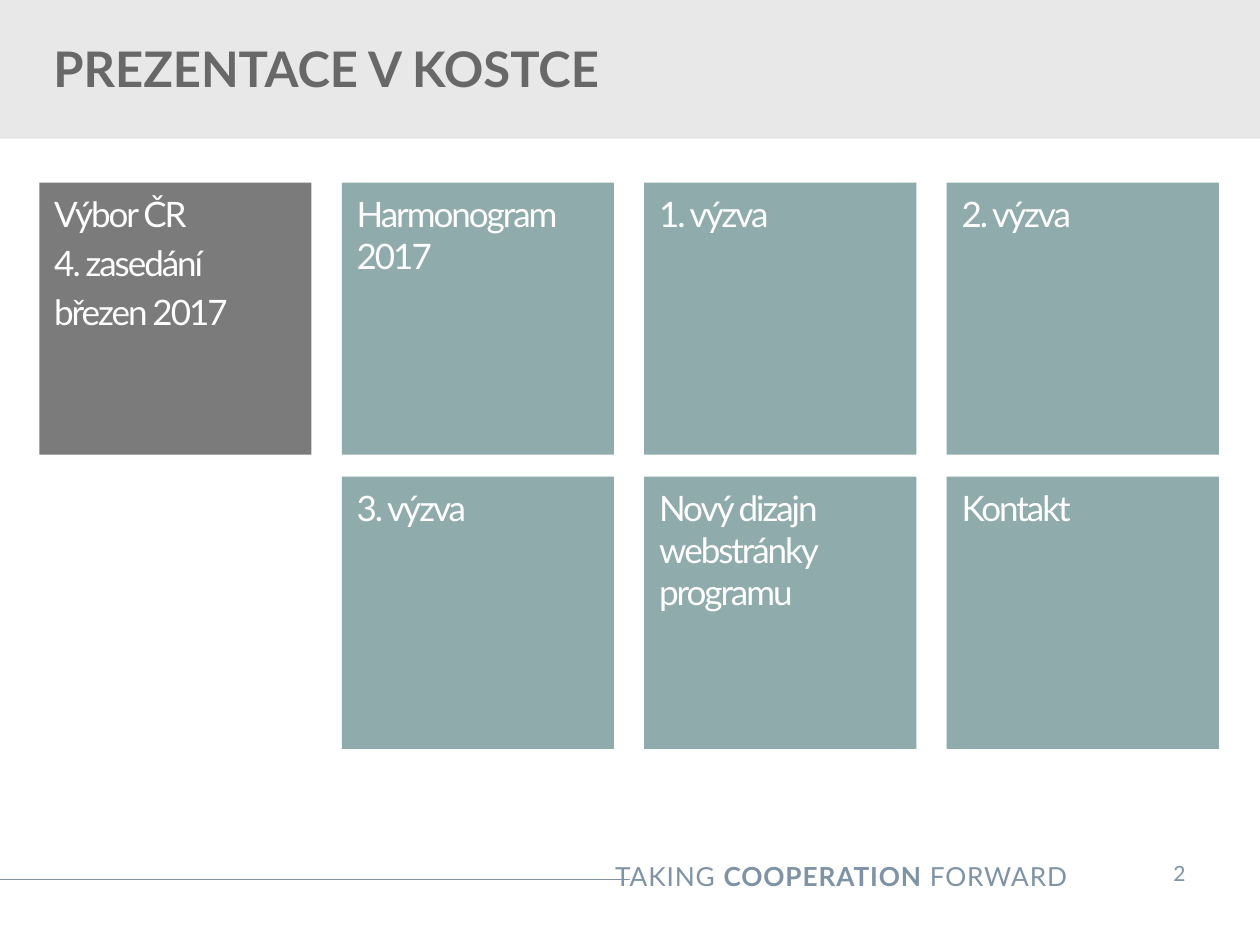
from dataclasses import dataclass

from pptx import Presentation
from pptx.dml.color import RGBColor
from pptx.enum.shapes import MSO_CONNECTOR, MSO_SHAPE
from pptx.enum.text import MSO_ANCHOR, PP_ALIGN
from pptx.oxml.ns import qn
from pptx.util import Pt

RECT = MSO_SHAPE.RECTANGLE
STRAIGHT = MSO_CONNECTOR.STRAIGHT
LEFT, CENTER, RIGHT = PP_ALIGN.LEFT, PP_ALIGN.CENTER, PP_ALIGN.RIGHT
TOP, MIDDLE = MSO_ANCHOR.TOP, MSO_ANCHOR.MIDDLE


@dataclass(frozen=True)
class Theme:
    font: str = "Lato"
    band: RGBColor = RGBColor(0xE8, 0xE8, 0xE8)
    title: RGBColor = RGBColor(0x68, 0x68, 0x68)
    active: RGBColor = RGBColor(0x7B, 0x7B, 0x7B)
    tile: RGBColor = RGBColor(0x90, 0xAB, 0xAB)
    tile_text: RGBColor = RGBColor(0xFF, 0xFF, 0xFF)
    footer: RGBColor = RGBColor(0x7E, 0x93, 0xA5)
    title_size: int = 28
    tile_size: int = 20
    footer_size: int = 15
    number_size: int = 12


THEME = Theme()

TILES = [
    (0, 0, ["Výbor ČR", "4. zasedání", "březen 2017"], THEME.active),
    (0, 1, ["Harmonogram 2017"], THEME.tile),
    (0, 2, ["1. výzva"], THEME.tile),
    (0, 3, ["2. výzva"], THEME.tile),
    (1, 1, ["3. výzva"], THEME.tile),
    (1, 2, ["Nový dizajn webstránky programu"], THEME.tile),
    (1, 3, ["Kontakt"], THEME.tile),
]


def add_rect(s, x, y, w, h, color):
    sp = s.shapes.add_shape(RECT, Pt(x), Pt(y), Pt(w), Pt(h))
    sp.shadow.inherit = False
    sp.fill.solid()
    sp.fill.fore_color.rgb = color
    sp.line.fill.background()
    return sp


def add_textbox(s, x, y, w, h):
    tf = s.shapes.add_textbox(Pt(x), Pt(y), Pt(w), Pt(h)).text_frame
    tf.word_wrap = True
    return tf


def set_font(p, size, color, bold=False):
    p.font.name = THEME.font
    p.font.size = Pt(size)
    p.font.color.rgb = color
    p.font.bold = bold


def add_run(p, text, spacing):
    r = p.add_run()
    r.text = text
    r._r.get_or_add_rPr().set("spc", str(round(spacing * 100)))
    return r


def add_header(s, x, y, w, h):
    add_rect(s, x, y, w, h, THEME.band)
    tf = add_textbox(s, x + 6, y + 11.5, 511, 54)
    tf.margin_left = Pt(24.5)
    tf.vertical_anchor = MIDDLE
    p = tf.paragraphs[0]
    p.text = "PREZENTACE V KOSTCE"
    set_font(p, THEME.title_size, THEME.title, bold=True)


def add_tile(s, x, y, side, lines, color):
    tf = add_rect(s, x, y, side, side, color).text_frame
    tf.word_wrap = True
    tf.vertical_anchor = TOP
    tf.margin_left = tf.margin_right = tf.margin_bottom = Pt(8.5)
    tf.margin_top = Pt(5.75)
    for i, line in enumerate(lines):
        p = tf.add_paragraph() if i else tf.paragraphs[0]
        p.alignment = LEFT
        if i:
            p.space_before = Pt(4)
        set_font(p, THEME.tile_size, THEME.tile_text)
        add_run(p, line, -1.2)


def add_tiles(s, x, y, w, h):
    cols, rows, side = 4, 2, 155.5
    step_x = (w - side) / (cols - 1)
    step_y = (h - side) / (rows - 1)
    for row, col, lines, color in TILES:
        add_tile(s, x + col * step_x, y + row * step_y, side, lines, color)


def add_footer(s, x, y, w, h):
    line_y = y + 18
    line = s.shapes.add_connector(
        STRAIGHT, Pt(x), Pt(line_y), Pt(x + w / 2), Pt(line_y))
    line.line.color.rgb = THEME.footer
    line.line.width = Pt(0.75)
    sp_pr = line._element.spPr
    sp_pr.append(sp_pr.makeelement(qn("a:effectLst"), {}))

    tf = add_textbox(s, x + 279.5, y + 3.5, 337.5, 25)
    p = tf.paragraphs[0]
    p.alignment = RIGHT
    set_font(p, THEME.footer_size, THEME.footer)
    for text, bold in [("TAKING ", False), ("COOPERATION", True), (" FORWARD", False)]:
        add_run(p, text, 0.5).font.bold = bold

    tf = add_textbox(s, x + 647.5, y, 53, h)
    tf.margin_left = tf.margin_right = Pt(14.4)
    tf.margin_top = tf.margin_bottom = Pt(7.2)
    p = tf.paragraphs[0]
    p.text = "2"
    p.alignment = CENTER
    set_font(p, THEME.number_size, THEME.footer)


def main():
    prs = Presentation()
    prs.slide_width, prs.slide_height = Pt(720), Pt(540)
    s = prs.slides.add_slide(prs.slide_layouts[6])
    add_footer(s, 0, 484.5, 720, 29)
    add_header(s, 0, 0, 720, 79.2)
    add_tiles(s, 22.5, 104.4, 674, 323.5)
    prs.save("out.pptx")


if __name__ == "__main__":
    main()
